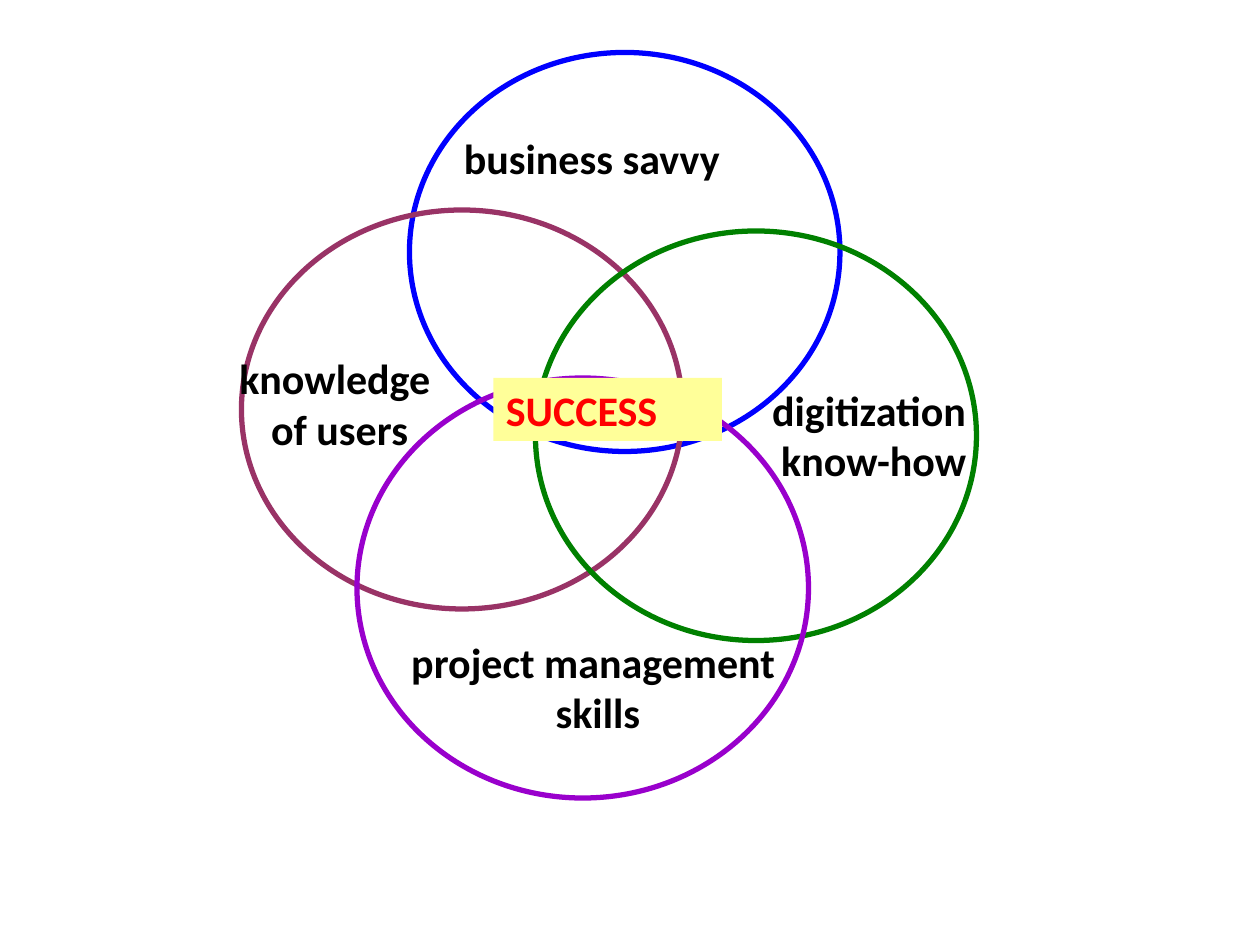
import pptx
import pptx.util
import pptx.dml.color
import pptx.enum.shapes
import pptx.enum.text
from dataclasses import dataclass

SHAPE = pptx.enum.shapes.MSO_SHAPE
ALIGN = pptx.enum.text.PP_ALIGN
CELL = 1 / 12  # grid of 120 columns by 90 rows, in inches


@dataclass(frozen=True)
class Theme:
    font: str = "Calibri"
    size: int = 24
    ring: int = 3
    ink: str = "000000"
    blue: str = "0000FF"
    plum: str = "993366"
    green: str = "008000"
    violet: str = "9900CC"
    red: str = "FF0000"
    yellow: str = "FFFF99"


def rgb(code):
    return pptx.dml.color.RGBColor.from_string(code)


def grid(*cells):
    return [pptx.util.Inches(cell * CELL) for cell in cells]


def write(frame, text, *, font, size, color, align):
    """Fill a text frame, one paragraph per line of text."""
    frame.word_wrap = False
    frame.auto_size = pptx.enum.text.MSO_AUTO_SIZE.SHAPE_TO_FIT_TEXT
    frame.vertical_anchor = pptx.enum.text.MSO_ANCHOR.TOP
    for i, line in enumerate(text.split("\n")):
        par = frame.add_paragraph() if i else frame.paragraphs[0]
        par.alignment = align
        run = par.add_run()
        run.text = line
        run.font.name = font
        run.font.size = pptx.util.Pt(size)
        run.font.bold = True
        run.font.color.rgb = rgb(color)


class Venn:
    def __init__(self, slide, theme):
        self.slide = slide
        self.theme = theme

    def shape(self, kind, box):
        item = self.slide.shapes.add_shape(kind, *grid(*box))
        item.shadow.inherit = False
        return item

    def text(self, frame, words, color, align):
        write(frame, words, font=self.theme.font, size=self.theme.size,
              color=color, align=align)

    def ring(self, color, *box):
        item = self.shape(SHAPE.OVAL, box)
        item.fill.background()
        item.line.color.rgb = rgb(color)
        item.line.width = pptx.util.Pt(self.theme.ring)

    def label(self, words, *box, align=ALIGN.CENTER):
        item = self.slide.shapes.add_textbox(*grid(*box))
        self.text(item.text_frame, words, self.theme.ink, align)

    def badge(self, words, *box):
        item = self.shape(SHAPE.RECTANGLE, box)
        item.fill.solid()
        item.fill.fore_color.rgb = rgb(self.theme.yellow)
        item.line.fill.background()
        self.text(item.text_frame, words, self.theme.red, ALIGN.LEFT)


def main():
    deck = pptx.Presentation()
    deck.slide_width, deck.slide_height = grid(120, 90)
    theme = Theme()
    venn = Venn(deck.slides.add_slide(deck.slide_layouts[6]), theme)

    # Overlapping rings
    venn.ring(theme.blue, 39, 5, 41, 38)
    venn.ring(theme.plum, 23, 20, 42, 38)
    venn.ring(theme.green, 51, 22, 42, 39)
    venn.ring(theme.violet, 34, 36, 43, 40)

    # Ring labels
    venn.label("business savvy", 43, 12, 32, 6, align=ALIGN.LEFT)
    venn.label("project management \nskills", 35.64, 60, 42.6, 10.8)
    venn.label("digitization \nknow-how", 70.92, 36, 24.6, 10.8)
    venn.label("knowledge \nof users", 20.28, 33, 24.12, 10.8)

    # Shared centre
    venn.badge("SUCCESS", 47, 36, 21.75, 6)

    deck.save("out.pptx")


if __name__ == "__main__":
    main()
